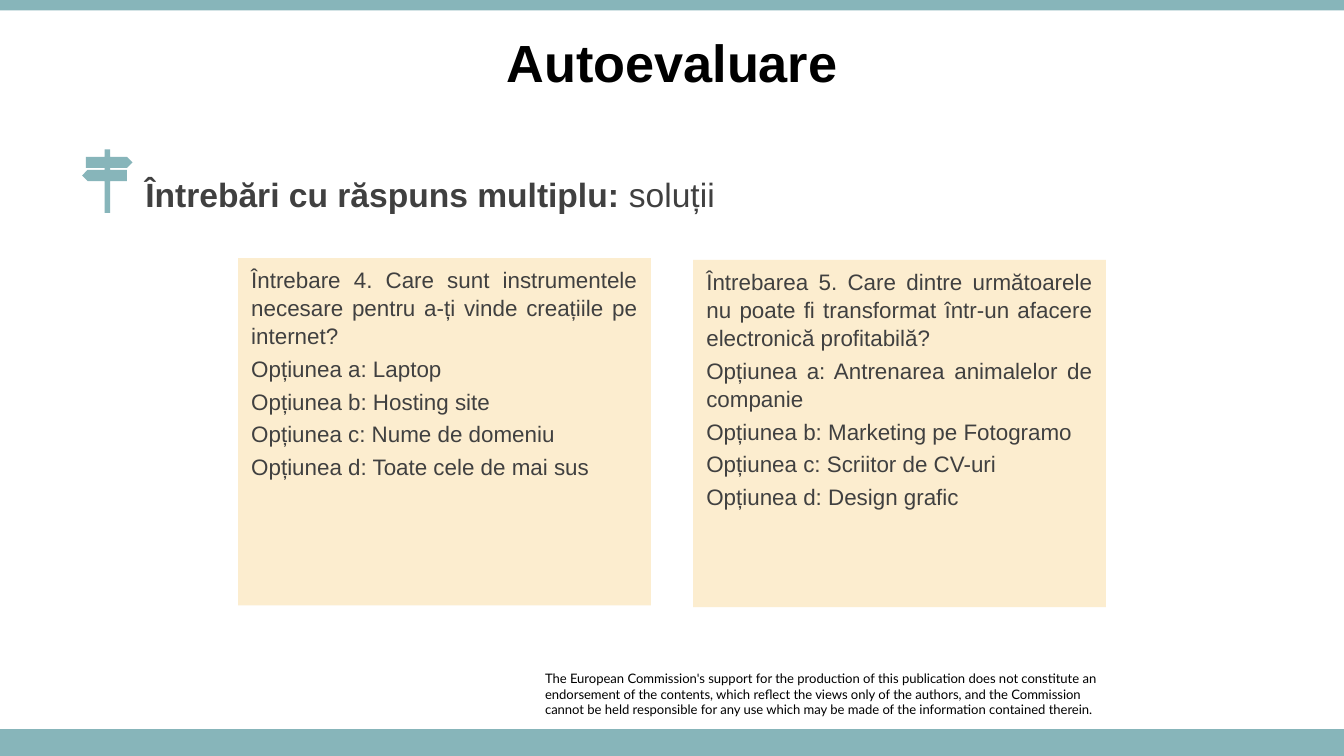
from dataclasses import dataclass
from math import cos, pi, sin

from lxml.etree import SubElement
from pptx import Presentation
from pptx.dml.color import RGBColor
from pptx.enum.shapes import MSO_SHAPE
from pptx.enum.text import MSO_ANCHOR, PP_ALIGN
from pptx.util import Pt


@dataclass(frozen=True)
class Theme:
    teal: str = "87B5BA"
    cream: str = "FCEDCF"
    ink: str = "404040"
    black: str = "000000"
    sans: str = "Arial"
    small: str = "Lato"
    title: int = 28
    head: int = 18
    body: int = 12
    note: int = 7


class Page:
    def __init__(self, slide, theme):
        self.slide = slide
        self.theme = theme

    def paint(self, shape, color):
        shape.shadow.inherit = False
        shape.fill.solid()
        shape.fill.fore_color.rgb = RGBColor.from_string(color)
        shape.line.fill.background()

    def style(self, font, size, color, face, bold=False):
        font.size = Pt(size)
        font.name = face
        font.bold = bold
        font.color.rgb = RGBColor.from_string(color)

    def rect(self, *box):
        return self.slide.shapes.add_shape(MSO_SHAPE.RECTANGLE, *map(Pt, box))

    def band(self, top, height):
        self.paint(self.rect(0, top, 720, height), self.theme.teal)

    def frame(self, *box):
        frame = self.slide.shapes.add_textbox(*map(Pt, box)).text_frame
        frame.word_wrap = True
        return frame

    def title(self, text, *box):
        frame = self.frame(*box)
        frame.vertical_anchor = MSO_ANCHOR.MIDDLE
        frame.text = text
        line = frame.paragraphs[0]
        line.alignment = PP_ALIGN.CENTER
        self.style(line.runs[0].font, self.theme.title, self.theme.black,
                   self.theme.sans, True)

    def head(self, strong, plain, *box):
        frame = self.frame(*box)
        frame.vertical_anchor = MSO_ANCHOR.MIDDLE
        for text, bold in ((strong, True), (plain, False)):
            run = frame.paragraphs[0].add_run()
            run.text = text
            self.style(run.font, self.theme.head, self.theme.ink,
                       self.theme.sans, bold)

    def note(self, lines, *box):
        frame = self.frame(*box)
        frame.margin_left = frame.margin_right = 0
        frame.margin_top = frame.margin_bottom = 0
        frame.text = "\n".join(lines)
        for line in frame.paragraphs:
            self.style(line.runs[0].font, self.theme.note, self.theme.black,
                       self.theme.small)

    def card(self, lines, *box):
        shape = self.rect(*box)
        self.paint(shape, self.theme.cream)
        frame = shape.text_frame
        frame.word_wrap = True
        frame.vertical_anchor = MSO_ANCHOR.TOP
        frame.text = "\n".join(lines)
        for index, line in enumerate(frame.paragraphs):
            line.alignment = PP_ALIGN.JUSTIFY
            line.line_spacing = 1.05
            line.space_before = Pt(0.2 * self.theme.body if index else 0)
            self.style(line.runs[0].font, self.theme.body, self.theme.ink,
                       self.theme.sans)

    def sign(self, mid, top, foot):
        half, near, tip, far = 1.8, 11, 10.7, 13.3
        cap = [(mid - half * cos(pi * k / 8), top + half - half * sin(pi * k / 8))
               for k in range(9)]
        right = [(half, 4.2), (tip, 4.2), (far, 7.15), (tip, 10.1), (half, 10.1),
                 (half, 11.6), (near, 11.6), (near, 17.5), (half, 17.5)]
        left = [(-half, 17.5), (-tip, 17.5), (-far, 14.55), (-tip, 11.6),
                (-half, 11.6), (-half, 10.1), (-near, 10.1), (-near, 4.2),
                (-half, 4.2)]
        points = cap + [(mid + x, top + y) for x, y in right]
        points += [(mid + half, foot), (mid - half, foot)]
        points += [(mid + x, top + y) for x, y in left]
        pen = self.slide.shapes.build_freeform(*points[0], scale=Pt(1))
        pen.add_line_segments(points[1:], close=True)
        self.paint(pen.convert_to_shape(), self.theme.teal)


def main():
    deck = Presentation()
    deck.slide_width, deck.slide_height = Pt(720), Pt(405)
    page = Page(deck.slides.add_slide(deck.slide_layouts[6]), Theme())

    page.note([
        "The European Commission's support for the production of this "
        "publication does not constitute an endorsement of the contents, which "
        "reflect the views only of the authors, and the Commission",
        "cannot be held responsible for any use which may be made of the "
        "information contained therein.",
    ], 292, 359.2, 300.5, 25)
    page.band(390.7, 14.3)
    page.band(0, 5.6)

    page.title("Autoevaluare", 0, 10, 720, 45.5)
    page.head("Întrebări cu răspuns multiplu: ", "soluții", 70.8, 92.5, 482, 22.5)
    page.sign(57.4, 79.8, 114.4)

    cards = [
        (127.5, 138.3, [
            "Întrebare 4. Care sunt instrumentele necesare pentru a-ți vinde "
            "creațiile pe internet?",
            "Opțiunea a: Laptop",
            "Opțiunea b: Hosting site",
            "Opțiunea c: Nume de domeniu",
            "Opțiunea d: Toate cele de mai sus",
        ]),
        (371.3, 139.3, [
            "Întrebarea 5. Care dintre următoarele nu poate fi transformat "
            "într-un afacere electronică profitabilă?",
            "Opțiunea a: Antrenarea animalelor de companie",
            "Opțiunea b: Marketing pe Fotogramo",
            "Opțiunea c: Scriitor de CV-uri",
            "Opțiunea d: Design grafic",
        ]),
    ]
    for left, top, lines in cards:
        page.card(lines, left, top, 221.2, 186)

    deck.save("out.pptx")


if __name__ == "__main__":
    main()
